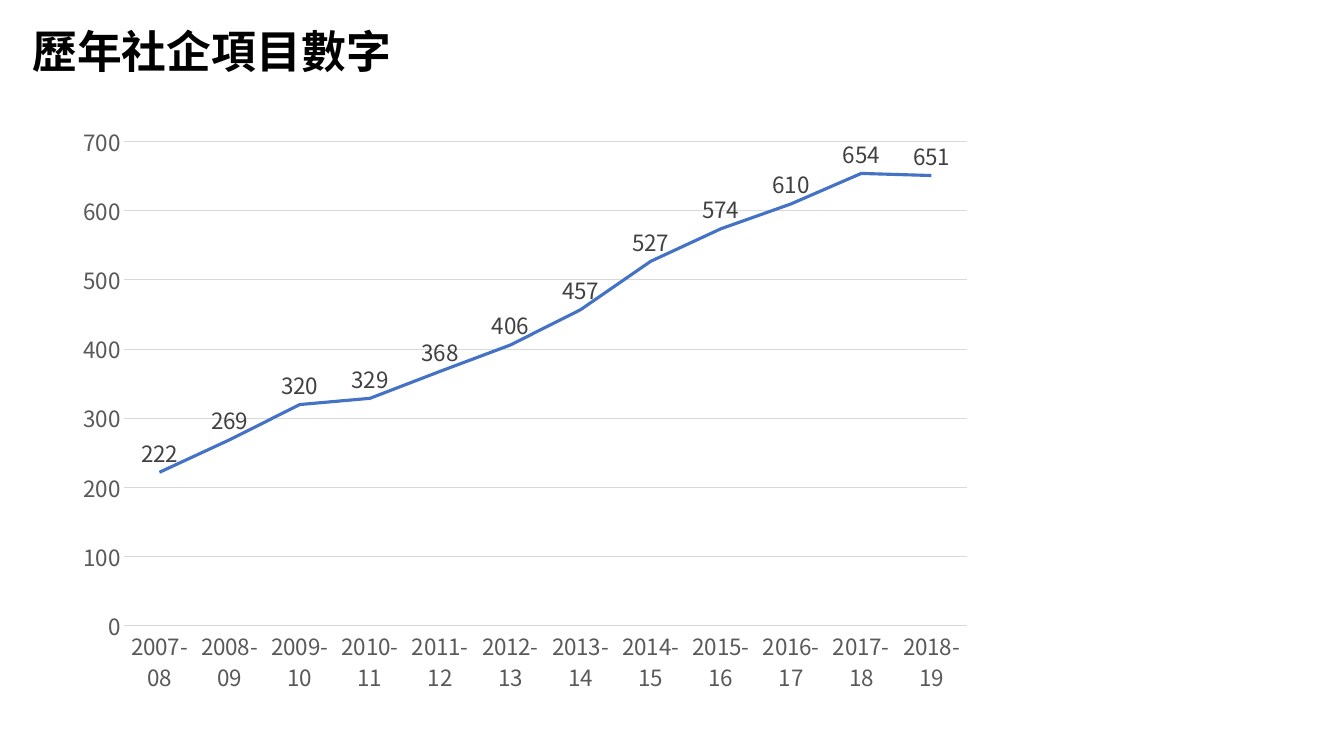
from dataclasses import dataclass
from typing import NamedTuple

from lxml import etree
from pptx import Presentation
from pptx.chart.axis import CategoryAxis, ValueAxis
from pptx.chart.chart import Chart
from pptx.chart.data import CategoryChartData
from pptx.dml.color import RGBColor
from pptx.enum.chart import XL_CHART_TYPE, XL_LABEL_POSITION, XL_TICK_MARK
from pptx.enum.text import MSO_ANCHOR, MSO_AUTO_SIZE, PP_ALIGN
from pptx.oxml import parse_xml
from pptx.oxml.ns import qn
from pptx.slide import Slide
from pptx.text.text import Font
from pptx.util import Emu, Pt

LINE_CHART = XL_CHART_TYPE.LINE
LABEL_ABOVE = XL_LABEL_POSITION.ABOVE
NO_TICK = XL_TICK_MARK.NONE
MIDDLE = MSO_ANCHOR.MIDDLE
GROW_SHAPE = MSO_AUTO_SIZE.SHAPE_TO_FIT_TEXT
LEFT = PP_ALIGN.LEFT

EMU_PER_PX = 9144  # 100 px to the inch
TITLE_ONLY = 5
CHART_NS = "http://schemas.openxmlformats.org/drawingml/2006/chart"


@dataclass(frozen=True)
class Theme:
    title_font: str = "Noto Sans CJK TC"
    chart_font: str = "Noto Sans CJK SC"
    title_size: int = 32
    chart_size: int = 10
    label_size: int = 16
    trend_width: float = 2.25
    rule_width: float = 0.75
    ink: RGBColor = RGBColor(0x00, 0x00, 0x00)
    axis_text: RGBColor = RGBColor(0x59, 0x59, 0x59)
    value_text: RGBColor = RGBColor(0x40, 0x40, 0x40)
    rule: RGBColor = RGBColor(0xD9, 0xD9, 0xD9)
    trend: RGBColor = RGBColor(0x44, 0x72, 0xC4)


class Box(NamedTuple):
    left: int
    top: int
    width: int
    height: int

    def emu(self) -> tuple[Emu, ...]:
        return tuple(px(length) for length in self)


class YearCount(NamedTuple):
    year: str
    projects: int


THEME = Theme()
TITLE_BOX = Box(22, 18, 394, 64)
CHART_BOX = Box(64, 113, 912, 586)
PLOT_SHARE = {"x": 0.065, "y": 0.047, "w": 0.916, "h": 0.82}

# Project counts by financial year, starting in 2007
COUNTS = [222, 269, 320, 329, 368, 406, 457, 527, 574, 610, 654, 651]
HISTORY = [
    YearCount(f"{year}-{(year + 1) % 100:02d}", projects)
    for year, projects in enumerate(COUNTS, start=2007)
]


def px(length: int) -> Emu:
    return Emu(length * EMU_PER_PX)


def style_font(font: Font, face: str, size: int, color: RGBColor, bold: bool = False) -> None:
    font.name = face
    font.size = Pt(size)
    font.bold = bold
    font.color.rgb = color


def add_title(slide: Slide, wording: str) -> None:
    heading = slide.shapes.title
    heading.left, heading.top, heading.width, heading.height = TITLE_BOX.emu()
    frame = heading.text_frame
    frame.word_wrap = False
    frame.auto_size = GROW_SHAPE
    frame.vertical_anchor = MIDDLE
    paragraph = frame.paragraphs[0]
    paragraph.alignment = LEFT
    run = paragraph.add_run()
    run.text = wording
    style_font(run.font, THEME.title_font, THEME.title_size, THEME.ink, bold=True)
    # Chinese glyphs use the East Asian typeface
    east_asian = etree.Element(qn("a:ea"), typeface=THEME.title_font)
    run.font._element.find(qn("a:latin")).addnext(east_asian)


def style_axis(axis: CategoryAxis | ValueAxis) -> None:
    axis.major_tick_mark = NO_TICK
    axis.minor_tick_mark = NO_TICK
    style_font(axis.tick_labels.font, THEME.chart_font, THEME.label_size, THEME.axis_text)


def place_plot(chart: Chart) -> None:
    plot_area = chart.element.find(f".//{qn('c:plotArea')}")
    for layout in plot_area.findall(qn("c:layout")):
        plot_area.remove(layout)
    modes = "".join(f'<c:{side}Mode val="edge"/>' for side in "xy")
    shares = "".join(f'<c:{key} val="{share}"/>' for key, share in PLOT_SHARE.items())
    plot_area.insert(0, parse_xml(
        f'<c:layout xmlns:c="{CHART_NS}"><c:manualLayout>'
        f'<c:layoutTarget val="inner"/>{modes}{shares}</c:manualLayout></c:layout>'
    ))


def add_history_chart(slide: Slide, history: list[YearCount]) -> None:
    history_data = CategoryChartData()
    history_data.categories = [entry.year for entry in history]
    history_data.add_series("Series 1", [entry.projects for entry in history])
    chart = slide.shapes.add_chart(LINE_CHART, *CHART_BOX.emu(), history_data).chart
    chart.has_legend = False
    chart.has_title = False
    style_font(chart.font, THEME.chart_font, THEME.chart_size, THEME.ink)
    place_plot(chart)

    # Axes and gridlines
    years, projects = chart.category_axis, chart.value_axis
    style_axis(years)
    style_axis(projects)
    projects.minimum_scale, projects.maximum_scale, projects.major_unit = 0, 700, 100
    projects.has_major_gridlines = True
    projects.format.line.fill.background()
    for rule in (years.format.line, projects.major_gridlines.format.line):
        rule.color.rgb = THEME.rule
        rule.width = Pt(THEME.rule_width)

    # Trend line with its values
    chart.plots[0].vary_by_categories = False
    trend = chart.plots[0].series[0]
    trend.smooth = False
    trend.format.line.color.rgb = THEME.trend
    trend.format.line.width = Pt(THEME.trend_width)
    labels = trend.data_labels
    labels.show_value = True
    labels.position = LABEL_ABOVE
    style_font(labels.font, THEME.chart_font, THEME.label_size, THEME.value_text)


def main() -> None:
    deck = Presentation()
    deck.slide_width, deck.slide_height = px(1333), px(750)
    slide = deck.slides.add_slide(deck.slide_layouts[TITLE_ONLY])
    add_title(slide, "歷年社企項目數字")
    add_history_chart(slide, HISTORY)
    deck.save("out.pptx")


if __name__ == "__main__":
    main()
